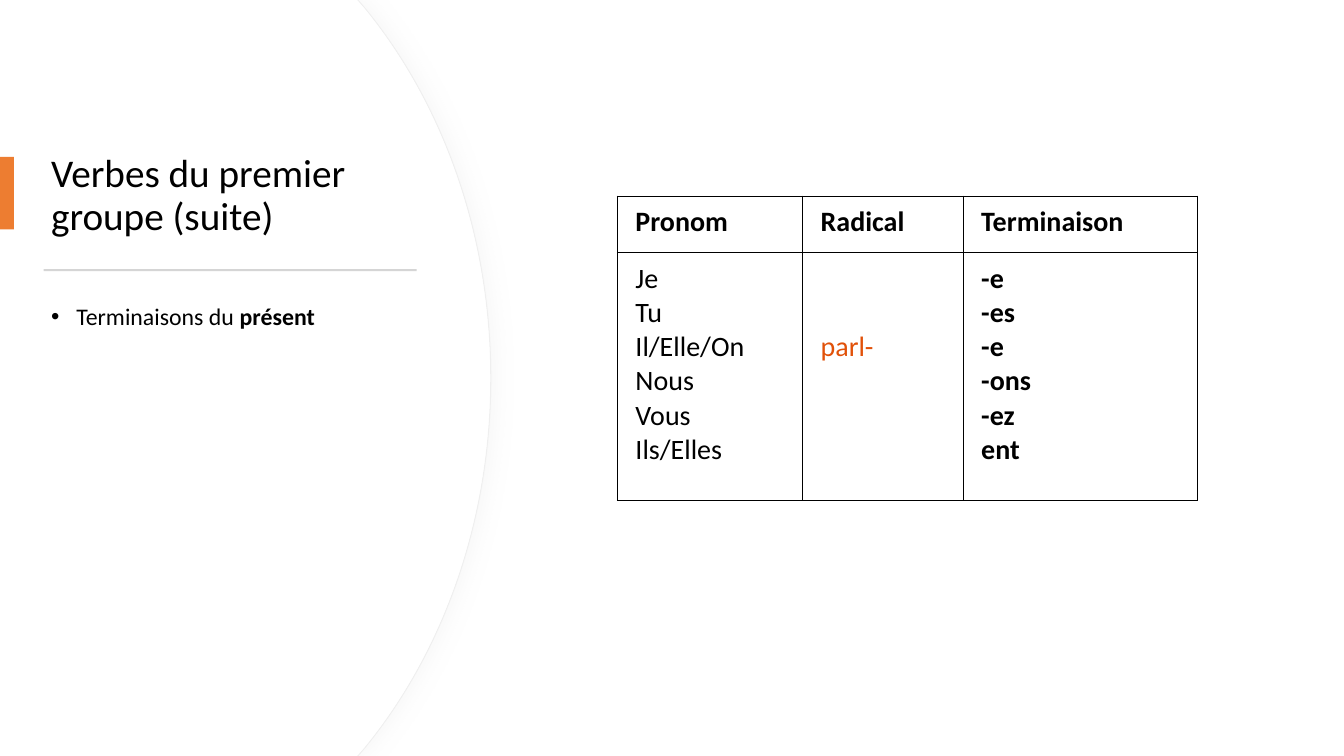
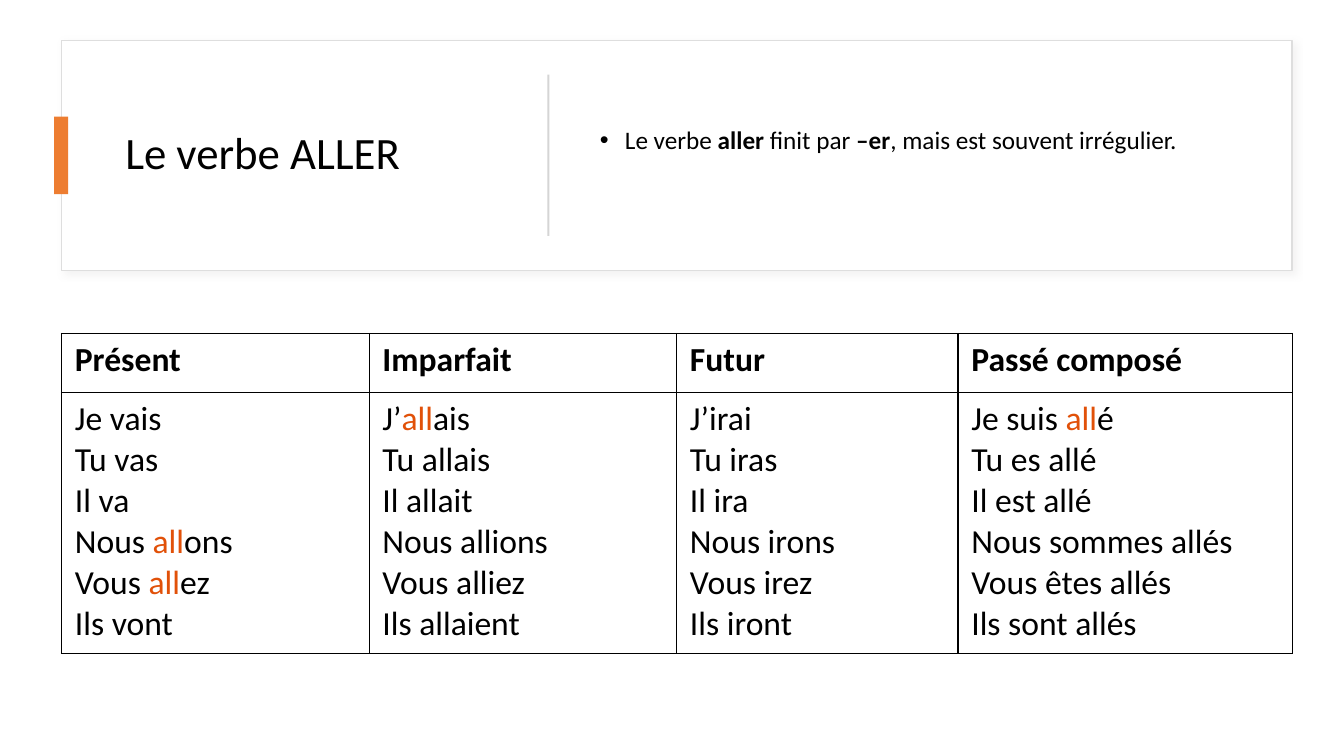
from lxml.etree import SubElement
from pptx import Presentation
from pptx.dml.color import RGBColor
from pptx.enum.shapes import MSO_SHAPE
from pptx.enum.text import MSO_ANCHOR, MSO_AUTO_SIZE, PP_ALIGN
from pptx.oxml.ns import qn
from pptx.util import Pt

FONT = "Calibri"
BLACK = RGBColor(0x00, 0x00, 0x00)
WHITE = RGBColor(0xFF, 0xFF, 0xFF)
ORANGE = RGBColor(0xED, 0x7D, 0x31)
STEM = RGBColor(0xE1, 0x51, 0x09)
RULE = RGBColor(0xD5, 0xD5, 0xD5)
CURVE_LINE = RGBColor(0xEF, 0xEF, 0xEF)
CURVE_SHADOW = RGBColor(0xD9, 0xD9, 0xD9)
CARD_LINE = RGBColor(0xDE, 0xDE, 0xDE)
CARD_SHADOW = RGBColor(0xC5, 0xC3, 0xC3)

SLIDE_WIDTH, SLIDE_HEIGHT = 960, 540
INDENT = 18
LINE_HEIGHT = 1.22

GROUP_ONE = {
    "title": ("Verbes du premier groupe (suite)", 28, (29.3, 91.8, 271, 97)),
    "list": ("Terminaisons du |présent|", 17, (29.3, 214, 271, 253), MSO_ANCHOR.TOP),
    "accent": (0, 112, 10, 52),
    "rule": (31.2, 192.2, 266.5, 1.5),
    "table": {
        "position": (441, 140.2),
        "widths": (132.3, 114.7, 167.4),
        "heights": (40.1, 177),
        "size": 20,
        "margins": (12.9, 6.4),
        "columns": [
            ("Pronom", ["Je", "Tu", "Il/Elle/On", "Nous", "Vous", "Ils/Elles"]),
            ("Radical", ["|parl-|"]),
            ("Terminaison", ["-e", "-es", "-e", "-ons", "-ez", "ent"]),
        ],
        "bold_columns": {2},
        "lines_above": {1: 2},
    },
}

ALLER = {
    "title": ("Le verbe ALLER", 32, (82.3, 46, 280, 130)),
    "list": ("Le verbe |aller| finit par |–er|, mais est souvent irrégulier.", 18,
             (421.2, 46, 472.3, 110), MSO_ANCHOR.MIDDLE),
    "accent": (38.6, 83.4, 10, 55.4),
    "rule": (391, 53.4, 1.5, 115.2),
    "table": {
        "position": (44, 238.1),
        "widths": (219.7, 219.7, 201, 238.7),
        "heights": (42.2, 186.5),
        "size": 24,
        "margins": (9.5, 4.7),
        "columns": [
            ("Présent", ["Je vais", "Tu vas", "Il va", "Nous |all|ons",
                         "Vous |all|ez", "Ils vont"]),
            ("Imparfait", ["J’|all|ais", "Tu allais", "Il allait",
                           "Nous allions", "Vous alliez", "Ils allaient"]),
            ("Futur", ["J’irai", "Tu iras", "Il ira", "Nous irons",
                       "Vous irez", "Ils iront"]),
            ("Passé composé", ["Je suis |all|é", "Tu es allé", "Il est allé",
                               "Nous sommes allés", "Vous êtes allés",
                               "Ils sont allés"]),
        ],
        "bold_columns": set(),
        "lines_above": {},
    },
}


def points(values):
    return [Pt(value) for value in values]


def style_paragraph(paragraph, size, bold=False):
    font = paragraph.font
    font.name, font.size, font.bold = FONT, Pt(size), bold
    font.color.rgb = BLACK


def add_marked_runs(paragraph, text, emphasise):
    for index, part in enumerate(text.split("|")):
        if part:
            run = paragraph.add_run()
            run.text = part
            if index % 2:
                emphasise(run.font)


def make_bold(font):
    font.bold = True


def make_stem(font):
    font.color.rgb = STEM


def paint(shape, fill, line=None, line_width=1):
    shape.shadow.inherit = False
    shape.fill.solid()
    shape.fill.fore_color.rgb = fill
    if line is None:
        shape.line.fill.background()
    else:
        shape.line.color.rgb = line
        shape.line.width = Pt(line_width)


def add_shadow(shape, color, opacity, blur, distance, angle):
    effects = shape._element.spPr.find(qn("a:effectLst"))
    shadow = SubElement(effects, qn("a:outerShdw"), blurRad=str(Pt(blur)),
                        dist=str(Pt(distance)), dir=str(angle * 60000),
                        algn="tl", rotWithShape="0")
    tint = SubElement(shadow, qn("a:srgbClr"), val=str(color))
    SubElement(tint, qn("a:alpha"), val=str(opacity * 1000))


def add_box(slide, box, fill, line=None):
    shape = slide.shapes.add_shape(MSO_SHAPE.RECTANGLE, *points(box))
    paint(shape, fill, line)
    return shape


def bend_segment(segment, controls):
    segment.tag = qn("a:cubicBezTo")
    for position, (x, y) in enumerate(controls):
        point = SubElement(segment, qn("a:pt"), x=str(Pt(x)), y=str(Pt(y)))
        segment.insert(position, point)


def add_curved_panel(slide, right):
    corner, start, middle = (right - 95, 0), (right - 90, 5.8), (right, 270)
    upper_controls = [(right - 34.6, 73.4), (right, 167)]

    def mirror(vertex):
        return vertex[0], SLIDE_HEIGHT - vertex[1]

    outline = [corner, start, middle, mirror(start), mirror(corner), (0, SLIDE_HEIGHT)]
    builder = slide.shapes.build_freeform(0, 0)
    builder.add_line_segments([points(vertex) for vertex in outline], close=True)
    panel = builder.convert_to_shape()
    segments = list(panel._element.iter(qn("a:lnTo")))
    bend_segment(segments[2], upper_controls)
    bend_segment(segments[3], [mirror(control) for control in reversed(upper_controls)])
    return panel


def add_curved_backdrop(slide):
    edge = add_curved_panel(slide, 350.6)
    paint(edge, WHITE, CURVE_LINE, 0.75)
    add_shadow(edge, CURVE_SHADOW, 20, 14, 3, 0)
    paint(add_curved_panel(slide, 350), WHITE)


def add_card_backdrop(slide):
    card = add_box(slide, (43.8, 29, 879.2, 164.2), WHITE, CARD_LINE)
    add_shadow(card, CARD_SHADOW, 20, 5, 3, 45)


def place_text(slide, placeholder, box, size, anchor):
    slide.shapes._spTree.append(placeholder._element)
    placeholder.left, placeholder.top, placeholder.width, placeholder.height = points(box)
    frame = placeholder.text_frame
    frame.word_wrap = True
    frame.auto_size = MSO_AUTO_SIZE.NONE
    frame.vertical_anchor = anchor
    paragraph = frame.paragraphs[0]
    paragraph.alignment = PP_ALIGN.LEFT
    paragraph.line_spacing = 0.9
    style_paragraph(paragraph, size)
    return paragraph


def add_heading(slide, content):
    text, size, box = content["title"]
    paragraph = place_text(slide, slide.shapes.title, box, size, MSO_ANCHOR.MIDDLE)
    paragraph.add_run().text = text

    add_box(slide, content["accent"], ORANGE)
    add_box(slide, content["rule"], RULE)

    text, size, box, anchor = content["list"]
    paragraph = place_text(slide, slide.placeholders[1], box, size, anchor)
    paragraph.space_before = Pt(0)
    properties = paragraph._p.get_or_add_pPr()
    properties.set("marL", str(Pt(INDENT)))
    properties.set("indent", str(-Pt(INDENT)))
    SubElement(properties, qn("a:buFont"), typeface="Arial")
    SubElement(properties, qn("a:buChar"), char="•")
    properties.append(properties.find(qn("a:defRPr")))
    add_marked_runs(paragraph, text, make_bold)


def add_borders(cell):
    properties = cell._tc.get_or_add_tcPr()
    for side in ("lnL", "lnR", "lnT", "lnB"):
        border = SubElement(properties, qn(f"a:{side}"), w=str(Pt(1)))
        fill = SubElement(border, qn("a:solidFill"))
        SubElement(fill, qn("a:srgbClr"), val=str(BLACK))


def fill_cell(cell, lines, size, margins, bold, lines_above=0):
    add_borders(cell)
    cell.fill.solid()
    cell.fill.fore_color.rgb = WHITE
    side, top = margins
    cell.margin_left = cell.margin_right = Pt(side)
    cell.margin_top = Pt(top + lines_above * size * LINE_HEIGHT)
    cell.margin_bottom = Pt(top)
    frame = cell.text_frame
    for index, line in enumerate(lines):
        paragraph = frame.add_paragraph() if index else frame.paragraphs[0]
        style_paragraph(paragraph, size, bold)
        add_marked_runs(paragraph, line, make_stem)


def add_verb_table(slide, content):
    widths, heights = content["widths"], content["heights"]
    box = (*content["position"], sum(widths), sum(heights))
    table = slide.shapes.add_table(len(heights), len(widths), *points(box)).table
    table.first_row = table.horz_banding = False
    for row, height in zip(table.rows, heights):
        row.height = Pt(height)
    size, margins = content["size"], content["margins"]
    for index, (header, forms) in enumerate(content["columns"]):
        table.columns[index].width = Pt(widths[index])
        fill_cell(table.cell(0, index), [header], size, margins, True)
        fill_cell(table.cell(1, index), forms, size, margins,
                  index in content["bold_columns"],
                  content["lines_above"].get(index, 0))


def main():
    presentation = Presentation()
    presentation.slide_width = Pt(SLIDE_WIDTH)
    presentation.slide_height = Pt(SLIDE_HEIGHT)
    for content, add_backdrop in ((GROUP_ONE, add_curved_backdrop),
                                  (ALLER, add_card_backdrop)):
        slide = presentation.slides.add_slide(presentation.slide_layouts[1])
        add_backdrop(slide)
        add_heading(slide, content)
        add_verb_table(slide, content["table"])
    presentation.save("out.pptx")


if __name__ == "__main__":
    main()
